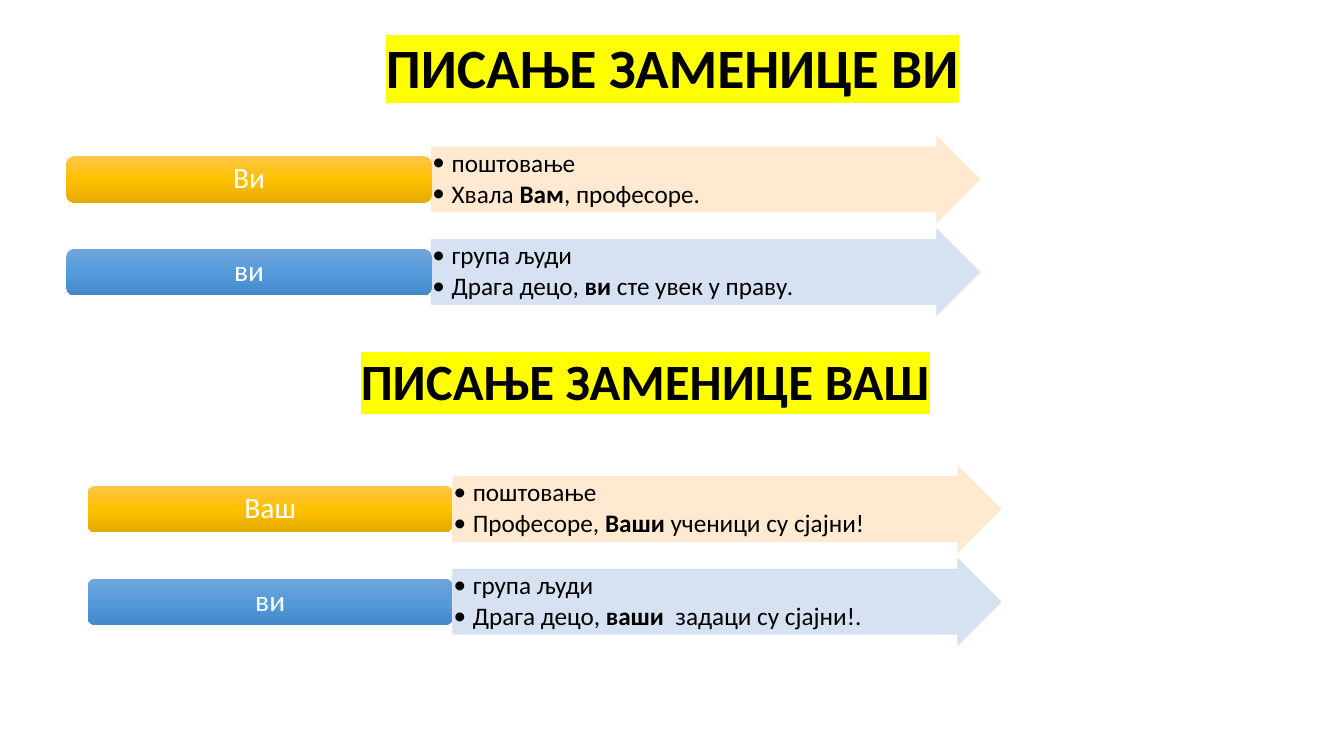
"""Builds a slide on writing the Serbian pronouns Ви and Ваш."""
from copy import deepcopy

from lxml import etree
from pptx import Presentation
from pptx.dml.color import RGBColor
from pptx.enum.shapes import MSO_SHAPE
from pptx.enum.text import MSO_ANCHOR, PP_ALIGN
from pptx.oxml.ns import qn
from pptx.util import Inches, Pt

ARROW, LABEL = MSO_SHAPE.RIGHT_ARROW, MSO_SHAPE.ROUNDED_RECTANGLE
MIDDLE = MSO_ANCHOR.MIDDLE
LEFT, CENTER = PP_ALIGN.LEFT, PP_ALIGN.CENTER

FONT = "Calibri"
COLORS = {
    "black": "000000",
    "white": "FFFFFF",
    "highlight": "FFFF00",
    "polite_arrow": "FFE8CC",
    "group_arrow": "D2DFF0",
}
GRADIENTS = {
    "polite": ("FFC64B", "FFC000", "E3AB00"),
    "group": ("71A6DB", "559BDB", "448ACA"),
}

LABEL_WIDTH, LABEL_HEIGHT = 3.62, 0.46
ARROW_WIDTH, ARROW_HEIGHT = 5.44, 0.86
ROW_STEP = 0.92
ROWS = ("polite", "group")

TITLES = (
    ("ПИСАЊЕ ЗАМЕНИЦЕ ВИ", 0.92, 0.4, 39.6, 0.9),
    ("ПИСАЊЕ ЗАМЕНИЦЕ ВАШ", 0.65, 3.55, 36.3, 0.7),
)
DIAGRAMS = (
    (0.66, 1.78, (
        ("Ви", "поштовање", ("Хвала ", "Вам", ", професоре.")),
        ("ви", "група људи", ("Драга децо, ", "ви", " сте увек у праву.")),
    )),
    (0.87, 5.05, (
        ("Ваш", "поштовање", ("Професоре, ", "Ваши ", "ученици су сјајни!")),
        ("ви", "група људи", ("Драга децо, ", "ваши ", " задаци су сјајни!.")),
    )),
)


def write(box, paragraphs, size, color="black", align=CENTER,
          margins=(0.1, 0.05), spacing=0.9, after=0.0, bold=False,
          highlight=None, bullet=None):
    """Fill a box with paragraphs of runs; every second run switches bold."""
    frame = box.text_frame
    frame.word_wrap = True
    frame.vertical_anchor = MIDDLE
    frame.margin_left = frame.margin_right = Inches(margins[0])
    frame.margin_top = frame.margin_bottom = Inches(margins[1])
    for index, runs in enumerate(paragraphs):
        para = frame.add_paragraph() if index else frame.paragraphs[0]
        para.alignment = align
        para.line_spacing = spacing
        para.space_after = Pt(after)
        if bullet:
            properties = para._p.get_or_add_pPr()
            properties.set("marL", str(Inches(0.19)))
            properties.set("indent", str(-Inches(0.19)))
            etree.SubElement(properties, qn("a:buFont")).set("typeface", FONT)
            etree.SubElement(properties, qn("a:buChar")).set("char", bullet)
        for position, text in enumerate(runs):
            span = para.add_run()
            span.text = text
            span.font.name = FONT
            span.font.size = Pt(size)
            span.font.bold = bold or position % 2 == 1
            span.font.color.rgb = RGBColor.from_string(COLORS[color])
            if highlight:
                marker = etree.Element(qn("a:highlight"))
                etree.SubElement(marker, qn("a:srgbClr")).set("val", COLORS[highlight])
                span._r.rPr.find(qn("a:solidFill")).addnext(marker)


deck = Presentation()
deck.slide_width, deck.slide_height = Inches(13.33), Inches(7.5)
page = deck.slides.add_slide(deck.slide_layouts[6])

for text, left, top, size, spacing in TITLES:
    title = page.shapes.add_textbox(Inches(left), Inches(top), Inches(11.5), Inches(0.59))
    write(title, [[text]], size, spacing=spacing, bold=True, highlight="highlight")

for left, first_middle, entries in DIAGRAMS:
    for row, (kind, (word, meaning, example)) in enumerate(zip(ROWS, entries)):
        middle = first_middle + row * ROW_STEP

        arrow = page.shapes.add_shape(
            ARROW, Inches(left + LABEL_WIDTH), Inches(middle - ARROW_HEIGHT / 2),
            Inches(ARROW_WIDTH), Inches(ARROW_HEIGHT))
        arrow.shadow.inherit = False
        arrow.adjustments[0], arrow.adjustments[1] = 0.75, 0.5
        arrow.line.width = Pt(0.5)
        arrow.fill.solid()
        for paint in (arrow.fill.fore_color, arrow.line.color):
            paint.rgb = RGBColor.from_string(COLORS[kind + "_arrow"])
        for tint in arrow._element.spPr.iter(qn("a:srgbClr")):
            etree.SubElement(tint, qn("a:alpha")).set("val", "90000")
        write(arrow, [[meaning], example], 18, align=LEFT,
              margins=(0.01, 0.01), after=2.7, bullet="•")

        label = page.shapes.add_shape(
            LABEL, Inches(left), Inches(middle - LABEL_HEIGHT / 2),
            Inches(LABEL_WIDTH), Inches(LABEL_HEIGHT))
        label.shadow.inherit = False
        label.line.fill.background()
        label.fill.gradient()
        label.fill.gradient_angle = 270
        last_stop = label._element.spPr.findall(".//" + qn("a:gs"))[-1]
        last_stop.addnext(deepcopy(last_stop))
        for step, (stop, shade) in enumerate(zip(label.fill.gradient_stops, GRADIENTS[kind])):
            stop.position = step / 2
            stop.color.rgb = RGBColor.from_string(shade)
        write(label, [[word]], 21, color="white", margins=(0.09, 0.04))

deck.save("out.pptx")
